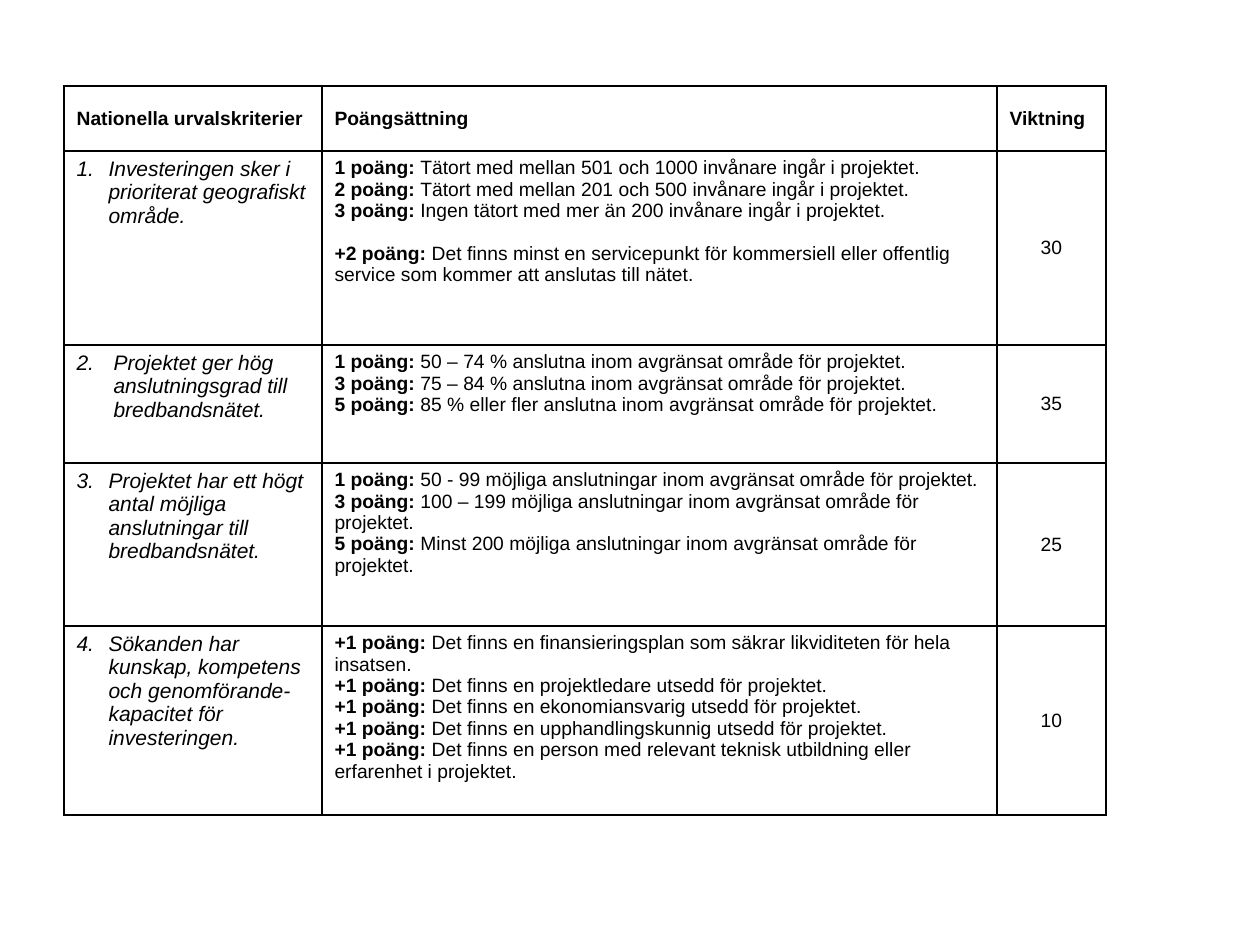
from lxml import etree
from pptx import Presentation
from pptx.dml.color import RGBColor
from pptx.enum.text import MSO_ANCHOR, PP_ALIGN
from pptx.oxml.ns import qn
from pptx.util import Emu, Pt

MIDDLE, TOP = MSO_ANCHOR.MIDDLE, MSO_ANCHOR.TOP
LEFT, CENTER = PP_ALIGN.LEFT, PP_ALIGN.CENTER
BLACK, WHITE = "000000", "FFFFFF"

# Content
HEADINGS = ["Nationella urvalskriterier", "Poängsättning", "Viktning"]
# criterion, hanging indent in px, [(points, condition)], weight
CRITERIA = [
    ("Investeringen sker i prioriterat geografiskt område.", 32, [
        ("1 poäng: ", "Tätort med mellan 501 och 1000 invånare ingår i projektet."),
        ("2 poäng: ", "Tätort med mellan 201 och 500 invånare ingår i projektet."),
        ("3 poäng: ", "Ingen tätort med mer än 200 invånare ingår i projektet."),
        ("+2 poäng: ", "Det finns minst en servicepunkt för kommersiell eller "
                       "offentlig service som kommer att anslutas till nätet."),
    ], "30"),
    ("Projektet ger hög anslutningsgrad till bredbandsnätet.", 37, [
        ("1 poäng: ", "50 – 74 % anslutna inom avgränsat område för projektet."),
        ("3 poäng: ", "75 – 84 % anslutna inom avgränsat område för projektet."),
        ("5 poäng: ", "85 % eller fler anslutna inom avgränsat område för projektet."),
    ], "35"),
    ("Projektet har ett högt antal möjliga anslutningar till bredbandsnätet.", 32, [
        ("1 poäng: ", "50 - 99 möjliga anslutningar inom avgränsat område för projektet."),
        ("3 poäng: ", "100 – 199 möjliga anslutningar inom avgränsat område för projektet."),
        ("5 poäng: ", "Minst 200 möjliga anslutningar inom avgränsat område för projektet."),
    ], "25"),
    ("Sökanden har kunskap, kompetens och genomförande-kapacitet för investeringen.", 32, [
        ("+1 poäng: ", "Det finns en finansieringsplan som säkrar likviditeten för hela insatsen."),
        ("+1 poäng: ", "Det finns en projektledare utsedd för projektet."),
        ("+1 poäng: ", "Det finns en ekonomiansvarig utsedd för projektet."),
        ("+1 poäng: ", "Det finns en upphandlingskunnig utsedd för projektet."),
        ("+1 poäng: ", "Det finns en person med relevant teknisk utbildning eller "
                       "erfarenhet i projektet."),
    ], "10"),
]
BONUS = "+2 poäng: "  # set apart from the base points by one line

# Layout in px
TABLE_LEFT, TABLE_TOP = 64, 86
COLUMN_WIDTHS = [258, 675, 109]
ROW_HEIGHTS = [65, 194, 118, 163, 189]

HEADING = {"size": Pt(11), "bold": True, "italic": False}
BODY = {"size": Pt(11), "bold": False, "italic": False}
CRITERION = {"size": Pt(12), "bold": False, "italic": True}


def px(length):
    return Emu(round(length * 914400 / 126))


def rgb(color):
    return RGBColor.from_string(color)


def add_run(paragraph, text, look):
    run = paragraph.add_run()
    run.text = text
    for key, value in {"name": "Arial", **look}.items():
        setattr(run.font, key, value)
    run.font.color.rgb = rgb(BLACK)


def number(paragraph, start, indent):
    properties = paragraph._p.get_or_add_pPr()
    properties.set("marL", str(px(indent)))
    properties.set("indent", str(-px(indent)))
    etree.SubElement(properties, qn("a:buFont"), typeface="+mj-lt")
    etree.SubElement(properties, qn("a:buAutoNum"), type="arabicPeriod", startAt=str(start))


def draw_borders(cell):
    properties = cell._tc.get_or_add_tcPr()
    for place, side in enumerate(("a:lnL", "a:lnR", "a:lnT", "a:lnB")):
        line = etree.Element(qn(side), w=str(Pt(1)))
        fill = etree.SubElement(line, qn("a:solidFill"))
        etree.SubElement(fill, qn("a:srgbClr"), val=BLACK)
        properties.insert(place, line)


def prepare(cell, anchor, alignment=LEFT):
    cell.vertical_anchor = anchor
    cell.fill.solid()
    cell.fill.fore_color.rgb = rgb(WHITE)
    draw_borders(cell)
    paragraph = cell.text_frame.paragraphs[0]
    paragraph.alignment = alignment
    return paragraph


def main():
    deck = Presentation()
    deck.slide_width, deck.slide_height = px(1260), px(945)
    slide = deck.slides.add_slide(deck.slide_layouts[6])
    table = slide.shapes.add_table(
        len(ROW_HEIGHTS), len(COLUMN_WIDTHS), px(TABLE_LEFT), px(TABLE_TOP),
        px(sum(COLUMN_WIDTHS)), px(sum(ROW_HEIGHTS))).table
    table.first_row = table.horz_banding = False
    for column, width in zip(table.columns, COLUMN_WIDTHS):
        column.width = px(width)
    for row, height in zip(table.rows, ROW_HEIGHTS):
        row.height = px(height)

    # Heading row
    for column, heading in enumerate(HEADINGS):
        add_run(prepare(table.cell(0, column), MIDDLE), heading, HEADING)

    # One row per criterion
    for row, (criterion, indent, scores, weight) in enumerate(CRITERIA, 1):
        paragraph = prepare(table.cell(row, 0), TOP)
        number(paragraph, row, indent)
        add_run(paragraph, criterion, CRITERION)

        score_cell = table.cell(row, 1)
        paragraph = prepare(score_cell, TOP)
        for place, (points, condition) in enumerate(scores):
            if place:
                paragraph = score_cell.text_frame.add_paragraph()
            if points == BONUS:
                paragraph.space_before = Pt(12.3)
            add_run(paragraph, points, HEADING)
            add_run(paragraph, condition, BODY)

        add_run(prepare(table.cell(row, 2), MIDDLE, CENTER), weight, BODY)

    deck.save("out.pptx")


if __name__ == "__main__":
    main()
